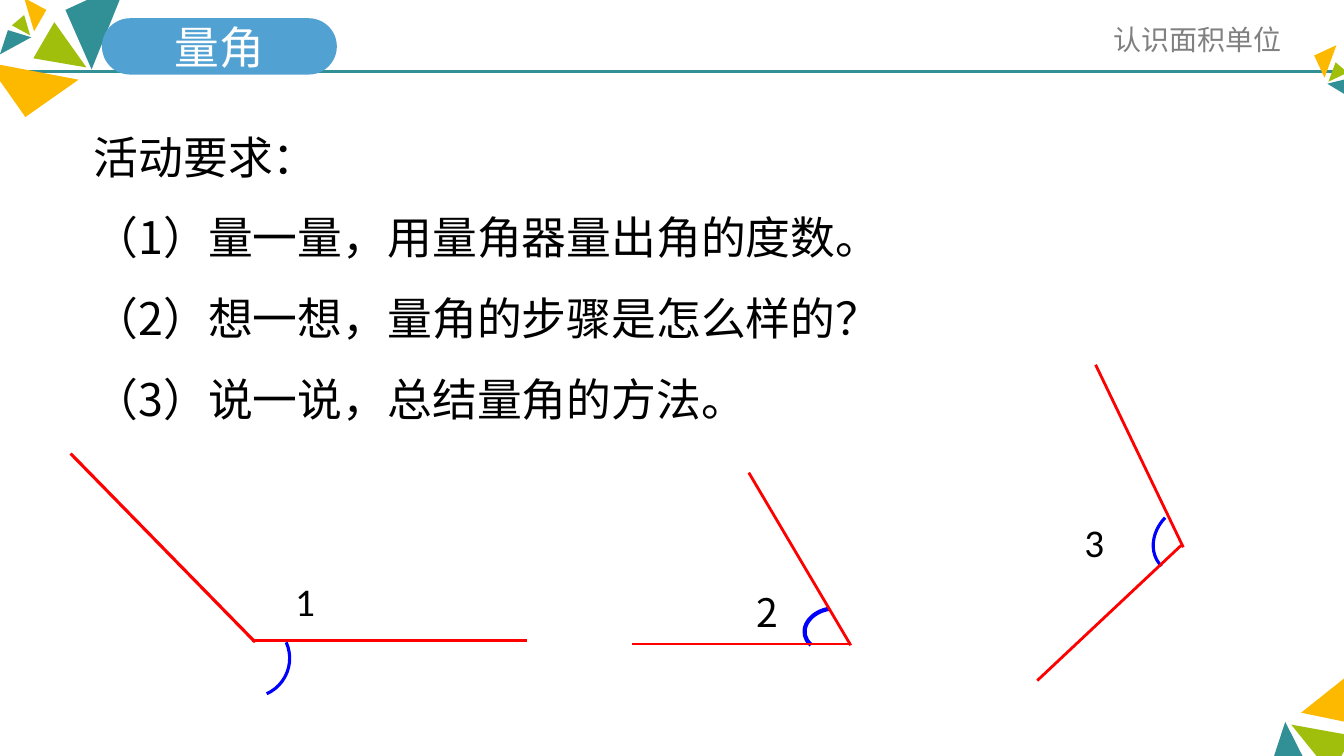
from dataclasses import dataclass

from lxml.etree import SubElement
from pptx import Presentation
from pptx.dml.color import RGBColor
from pptx.enum.shapes import MSO_CONNECTOR, MSO_SHAPE
from pptx.enum.text import MSO_ANCHOR, PP_ALIGN
from pptx.oxml.ns import qn
from pptx.util import Cm, Pt

TEAL = RGBColor(0x31, 0x90, 0x95)
GREEN = RGBColor(0xA0, 0xBF, 0x0D)
GOLD = RGBColor(0xFD, 0xB9, 0x00)
SKY = RGBColor(0x51, 0xA1, 0xD2)
RED = RGBColor(0xFF, 0x00, 0x00)
BLUE = RGBColor(0x00, 0x00, 0xFF)
GRAY = RGBColor(0x80, 0x80, 0x80)
BLACK = RGBColor(0x00, 0x00, 0x00)
WHITE = RGBColor(0xFF, 0xFF, 0xFF)
CHINESE_FONT = "Noto Sans CJK SC"
LATIN_FONT = "Calibri"

Point = tuple[float, float]
Box = tuple[float, float, float, float]


@dataclass
class Triangle:
    color: RGBColor
    corners: tuple[Point, Point, Point]


@dataclass
class Ray:
    end: Point
    vertex: Point
    width: float = 2


@dataclass
class AngleArc:
    box: Box
    rotation: float
    start: float = 270
    stop: float = 0
    width: float = 2.25


@dataclass
class Label:
    box: Box
    lines: tuple[str, ...]
    size: float
    color: RGBColor = BLACK
    font: str = CHINESE_FONT
    align: PP_ALIGN = PP_ALIGN.LEFT
    anchor: MSO_ANCHOR = MSO_ANCHOR.TOP
    spacing: float = 1.0
    wrap: bool = True


TRIANGLES = [
    # Bottom right corner
    Triangle(TEAL, ((31.6, 20.6), (32.39, 18.19), (33.25, 19.89))),
    Triangle(GREEN, ((34.09, 18.54), (32.54, 18.26), (33.55, 19.51))),
    Triangle(GOLD, ((34.16, 16.87), (32.79, 17.96), (35.26, 18.47))),
    # Top left corner, large
    Triangle(TEAL, ((3.2, -0.46), (2.31, 1.75), (1.65, 0.25))),
    Triangle(GREEN, ((0.84, 1.47), (2.18, 1.7), (1.37, 0.56))),
    Triangle(GOLD, ((0.64, 2.95), (1.98, 2.01), (-0.33, 1.57))),
    # Top left corner, small
    Triangle(TEAL, ((0, 1.37), (0.79, 0.94), (0.2, 0.76))),
    Triangle(GREEN, ((0.61, 0.38), (0.76, 0.89), (0.3, 0.64))),
    Triangle(GOLD, ((1.17, 0.25), (0.86, 0.79), (0.61, -0.05))),
    # Right end of the header line
    Triangle(TEAL, ((34.21, 2.57), (33.45, 2.11), (34.06, 1.96))),
    Triangle(GREEN, ((33.66, 1.57), (33.48, 2.06), (33.96, 1.83))),
    Triangle(GOLD, ((33.12, 1.4), (33.38, 1.96), (33.68, 1.14))),
]
ARCS = [
    AngleArc((5.34, 15.61, 1.96, 1.96), 65.8),
    AngleArc((20.27, 15.34, 1.37, 1.04), 347.5, 155.38, 275.05, 3),
    AngleArc((29.14, 12.65, 1.57, 1.88), 224.1),
]
RAYS = [
    Ray((13.28, 16.13), (6.35, 16.13), 2.25),
    Ray((1.78, 11.43), (6.43, 16.18), 2.25),
    Ray((18.87, 11.91), (21.44, 16.26)),
    Ray((15.93, 16.23), (21.44, 16.23)),
    Ray((27.61, 9.19), (29.82, 13.79)),
    Ray((26.14, 17.15), (29.77, 13.74)),
]
BADGE = Label((2.57, 0.46, 5.92, 1.42), ("量角",), 32, WHITE,
              align=PP_ALIGN.CENTER, anchor=MSO_ANCHOR.MIDDLE)
LABELS = [
    Label((27.71, 0.08, 4.95, 1.8), ("认识面积单位",), 20, GRAY,
          align=PP_ALIGN.CENTER, anchor=MSO_ANCHOR.MIDDLE),
    Label((2.11, 2.46, 31.75, 8.15), (
        "活动要求：",
        "（1）量一量，用量角器量出角的度数。",
        "（2）想一想，量角的步骤是怎么样的？",
        "（3）说一说，总结量角的方法。",
    ), 32, spacing=1.5),
    Label((7.19, 14.43, 1.65, 1.45), ("1",), 28, font=LATIN_FONT),
    Label((18.82, 14.71, 0.99, 1.45), ("2",), 28, wrap=False),
    Label((27.08, 12.93, 1.83, 1.45), ("3",), 28, font=LATIN_FONT),
]


def to_cm(values: tuple[float, ...]) -> list[Cm]:
    return [Cm(value) for value in values]


def draw_triangle(shapes, triangle: Triangle) -> None:
    first, *others = [to_cm(corner) for corner in triangle.corners]
    builder = shapes.build_freeform(*first)
    builder.add_line_segments(others, close=True)
    shape = builder.convert_to_shape()
    shape.shadow.inherit = False
    shape.fill.solid()
    shape.fill.fore_color.rgb = triangle.color
    shape.line.fill.background()


def draw_line(shapes, start: Point, end: Point, color: RGBColor, width: float) -> None:
    line = shapes.add_connector(MSO_CONNECTOR.STRAIGHT, *to_cm(start), *to_cm(end))
    line.line.color.rgb = color
    line.line.width = Pt(width)
    SubElement(line._element.spPr, qn("a:effectLst"))


def draw_arc(shapes, arc: AngleArc) -> None:
    shape = shapes.add_shape(MSO_SHAPE.ARC, *to_cm(arc.box))
    shape.shadow.inherit = False
    # Adjustments count 100000 units, angles 60000 per degree
    for index, degrees in enumerate((arc.start, arc.stop)):
        shape.adjustments[index] = degrees * 0.6
    shape.rotation = arc.rotation
    shape.fill.background()
    shape.line.color.rgb = BLUE
    shape.line.width = Pt(arc.width)


def write_text(shape, label: Label) -> None:
    frame = shape.text_frame
    frame.word_wrap = label.wrap
    frame.vertical_anchor = label.anchor
    run_format = {"name": label.font, "size": Pt(label.size)}
    for index, line in enumerate(label.lines):
        paragraph = frame.add_paragraph() if index else frame.paragraphs[0]
        paragraph.alignment = label.align
        paragraph.line_spacing = label.spacing
        run = paragraph.add_run()
        run.text = line
        for name, value in run_format.items():
            setattr(run.font, name, value)
        run.font.color.rgb = label.color
        SubElement(run._r.get_or_add_rPr(), qn("a:ea"), typeface=label.font)


def draw_badge(shapes, label: Label) -> None:
    shape = shapes.add_shape(MSO_SHAPE.ROUNDED_RECTANGLE, *to_cm(label.box))
    shape.shadow.inherit = False
    shape.adjustments[0] = 0.5
    shape.fill.solid()
    shape.fill.fore_color.rgb = SKY
    shape.line.fill.background()
    write_text(shape, label)


def main() -> None:
    presentation = Presentation()
    presentation.slide_width, presentation.slide_height = Cm(33.87), Cm(19.05)
    slide = presentation.slides.add_slide(presentation.slide_layouts[6])
    shapes = slide.shapes

    # Header line and corner decoration
    draw_line(shapes, (0.08, 1.8), (33.87, 1.8), TEAL, 2.25)
    for triangle in TRIANGLES:
        draw_triangle(shapes, triangle)

    # Three angles to measure
    for arc in ARCS:
        draw_arc(shapes, arc)
    for ray in RAYS:
        draw_line(shapes, ray.end, ray.vertex, RED, ray.width)

    # Title badge and texts
    draw_badge(shapes, BADGE)
    for label in LABELS:
        write_text(shapes.add_textbox(*to_cm(label.box)), label)

    presentation.save("out.pptx")


if __name__ == "__main__":
    main()
